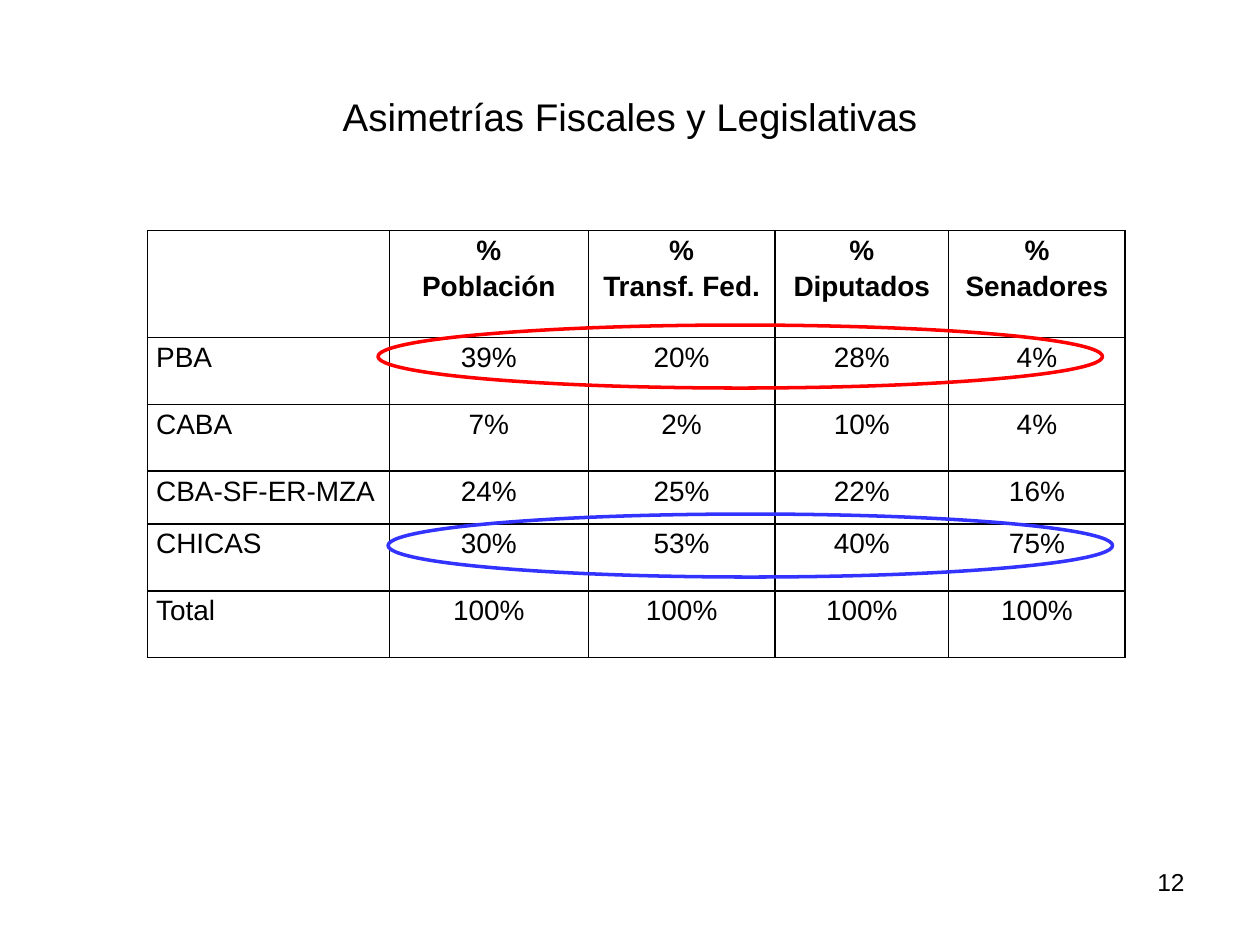
from dataclasses import dataclass

from lxml import etree
from pptx import Presentation
from pptx.dml.color import RGBColor
from pptx.enum import shapes, text
from pptx.oxml import ns
from pptx.util import Inches, Pt


@dataclass(frozen=True)
class Theme:
    font: str = "Arial"
    ink: str = "000000"
    red: str = "FF0000"
    blue: str = "3333FF"
    title: int = 22
    table: int = 16
    number: int = 14
    border: int = 1
    ring: int = 2


THEME = Theme()
COLUMN_WIDTHS = (1.92, 1.58, 1.48, 1.38, 1.4)
ROW_HEIGHTS = (0.85, 0.53, 0.53, 0.42, 0.53, 0.53)
SHARES = (
    ("", "%\nPoblación", "%\nTransf. Fed.", "%\nDiputados", "%\nSenadores"),
    ("PBA", "39%", "20%", "28%", "4%"),
    ("CABA", "7%", "2%", "10%", "4%"),
    ("CBA-SF-ER-MZA", "24%", "25%", "22%", "16%"),
    ("CHICAS", "30%", "53%", "40%", "75%"),
    ("Total", "100%", "100%", "100%", "100%"),
)


def style_paragraph(paragraph, size, align, bold=False):
    paragraph.alignment = align
    font = paragraph.font
    font.name, font.size, font.bold = THEME.font, Pt(size), bold
    font.color.rgb = RGBColor.from_string(THEME.ink)


def place(shape, box):
    shape.left, shape.top, shape.width, shape.height = map(Inches, box)


def add_title(slide, box):
    title = slide.shapes.title
    place(title, box)
    title.text_frame.text = "Asimetrías Fiscales y Legislativas"
    title.text_frame.vertical_anchor = text.MSO_ANCHOR.MIDDLE
    style_paragraph(title.text_frame.paragraphs[0], THEME.title, text.PP_ALIGN.CENTER)


def add_page_number(slide, box):
    frame = slide.shapes.add_textbox(*map(Inches, box)).text_frame
    frame.word_wrap = True
    frame.text = "12"
    style_paragraph(frame.paragraphs[0], THEME.number, text.PP_ALIGN.RIGHT)


def add_borders(cell):
    properties = cell._tc.get_or_add_tcPr()
    for side in ("a:lnL", "a:lnR", "a:lnT", "a:lnB"):
        line = etree.SubElement(properties, ns.qn(side), w=str(Pt(THEME.border)))
        fill = etree.SubElement(line, ns.qn("a:solidFill"))
        etree.SubElement(fill, ns.qn("a:srgbClr"), val=THEME.ink)


def fill_cell(cell, wording, align, bold):
    cell.margin_left = cell.margin_right = Inches(0.07)
    cell.margin_top = cell.margin_bottom = 0
    add_borders(cell)
    cell.fill.background()
    cell.text_frame.text = wording
    for paragraph in cell.text_frame.paragraphs:
        style_paragraph(paragraph, THEME.table, align, bold)
        paragraph.line_spacing = 1.15


def add_shares_table(slide, box):
    table = slide.shapes.add_table(
        len(ROW_HEIGHTS), len(COLUMN_WIDTHS), *map(Inches, box)).table
    table.first_row = table.horz_banding = False
    for column, width in zip(table.columns, COLUMN_WIDTHS):
        column.width = Inches(width)
    for row, height in zip(table.rows, ROW_HEIGHTS):
        row.height = Inches(height)
    for r, entries in enumerate(SHARES):
        for c, wording in enumerate(entries):
            align = text.PP_ALIGN.CENTER if c else text.PP_ALIGN.LEFT
            fill_cell(table.cell(r, c), wording, align, bold=r == 0)


def add_ring(slide, box, color):
    ring = slide.shapes.add_shape(shapes.MSO_SHAPE.OVAL, *map(Inches, box))
    ring.shadow.inherit = False
    ring.fill.background()
    ring.line.color.rgb = RGBColor.from_string(color)
    ring.line.width = Pt(THEME.ring)


def main():
    deck = Presentation()
    deck.slide_width, deck.slide_height = Inches(10), Inches(7.5)
    title_only = deck.slide_layouts[5]
    slide = deck.slides.add_slide(title_only)
    add_title(slide, (0.5, 0.3, 9, 1.25))
    add_page_number(slide, (7.17, 6.83, 2.33, 0.52))
    add_shares_table(slide, (1.17, 1.83, sum(COLUMN_WIDTHS), sum(ROW_HEIGHTS)))
    add_ring(slide, (3.08, 4.08, 5.75, 0.5), THEME.blue)
    add_ring(slide, (3, 2.58, 5.75, 0.5), THEME.red)
    deck.save("out.pptx")


if __name__ == "__main__":
    main()
